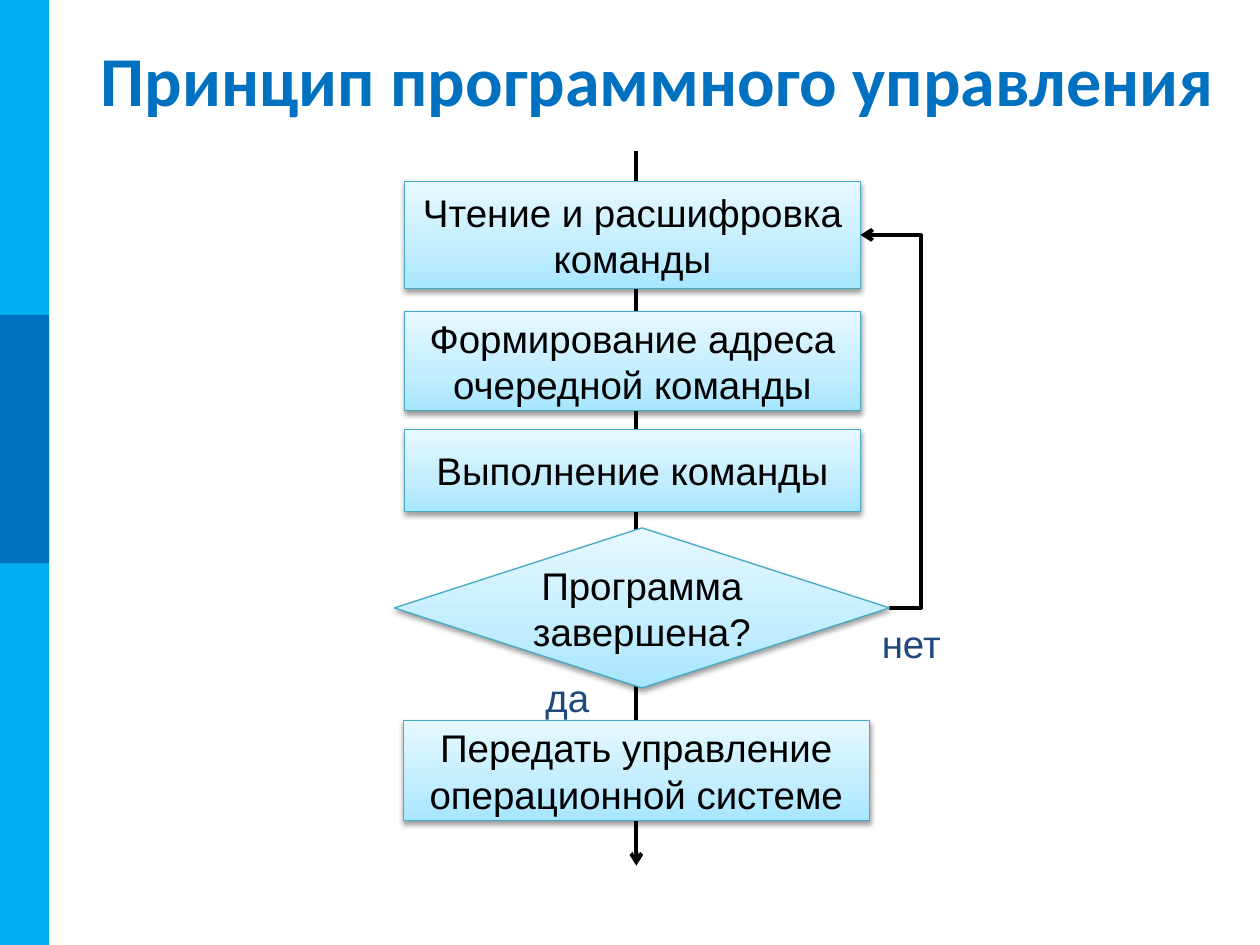
from lxml import etree
from pptx import Presentation
from pptx.dml.color import RGBColor
from pptx.enum.shapes import MSO_CONNECTOR, MSO_SHAPE
from pptx.enum.text import MSO_ANCHOR, PP_ALIGN
from pptx.oxml.ns import qn
from pptx.util import Inches, Pt

RECTANGLE = MSO_SHAPE.RECTANGLE
PROCESS = MSO_SHAPE.FLOWCHART_PROCESS
DECISION = MSO_SHAPE.FLOWCHART_DECISION
STRAIGHT, ELBOW = MSO_CONNECTOR.STRAIGHT, MSO_CONNECTOR.ELBOW
MIDDLE, TOP = MSO_ANCHOR.MIDDLE, MSO_ANCHOR.TOP
LEFT, CENTER = PP_ALIGN.LEFT, PP_ALIGN.CENTER

WIDTH, HEIGHT = 10, 7.5
GRADIENT = [(0, "A7E6FF"), (35, "C1EDFF"), (100, "E7F8FF")]

# Flowchart steps: kind, box (left, top, width, height), wording
STEPS = [
    (PROCESS, (3.21, 1.44, 3.62, 0.85), "Чтение и расшифровка команды"),
    (PROCESS, (3.21, 2.47, 3.62, 0.79), "Формирование адреса очередной команды"),
    (PROCESS, (3.21, 3.41, 3.62, 0.65), "Выполнение команды"),
    (DECISION, (3.13, 4.19, 3.93, 1.27), "Программа завершена?"),
    (PROCESS, (3.2, 5.72, 3.7, 0.79), "Передать управление операционной системе"),
]
BRANCHES = [((4.23, 5.3, 0.55, 0.47), "да"), ((6.9, 4.87, 0.68, 0.47), "нет")]


def color(value):
    return RGBColor.from_string(value)


def inches(values):
    return [Inches(value) for value in values]


def add_xml(parent, tag, **attributes):
    return etree.SubElement(parent, qn(tag), attributes)


def write(shape, text, size, font, ink, align=LEFT, anchor=TOP, bold=False, wrap=True):
    frame = shape.text_frame
    frame.word_wrap = wrap
    frame.vertical_anchor = anchor
    para = frame.paragraphs[0]
    para.text = text
    para.alignment = align
    para.font.size = Pt(size)
    para.font.name = font
    para.font.bold = bold
    para.font.color.rgb = color(ink)


def add_band(page, box, fill):
    band = page.shapes.add_shape(RECTANGLE, *inches(box))
    band.shadow.inherit = False
    band.fill.solid()
    band.fill.fore_color.rgb = color(fill)
    band.line.fill.background()


def add_sidebar(page, box):
    left, top, width, height = box
    add_band(page, box, "00B0F0")
    add_band(page, (left, top + height / 3, width, 1.97), "0070C0")


def add_title(page, box):
    title = page.shapes.add_textbox(*inches(box))
    write(title, "Принцип программного управления", 40, "Calibri", "0070C0",
          anchor=MIDDLE, bold=True)


def add_arrow(page, kind, start, end, bend=None):
    arrow = page.shapes.add_connector(kind, *inches(start + end))
    arrow.line.color.rgb = color("000000")
    arrow.line.width = Pt(2.25)
    properties = arrow._element.spPr
    add_xml(properties.find(qn("a:ln")), "a:tailEnd", type="arrow")
    add_xml(properties, "a:effectLst")
    if bend is not None:
        guides = properties.find(qn("a:prstGeom")).find(qn("a:avLst"))
        add_xml(guides, "a:gd", name="adj1", fmla=f"val {round(bend * 100000)}")


def add_step(page, kind, box, text):
    step = page.shapes.add_shape(kind, *inches(box))
    step.line.color.rgb = color("46AAC5")
    step.line.width = Pt(0.75)
    # Three-stop gradient, rising from the bottom edge
    step.fill.gradient()
    step.fill.gradient_angle = 90
    properties = step._element.spPr
    stops = properties.find(qn("a:gradFill")).find(qn("a:gsLst"))
    for stop in list(stops):
        stops.remove(stop)
    for position, value in GRADIENT:
        stop = add_xml(stops, "a:gs", pos=str(position * 1000))
        add_xml(stop, "a:srgbClr", val=value)
    # Soft shadow straight below
    step.shadow.inherit = False
    shadow = add_xml(properties.find(qn("a:effectLst")), "a:outerShdw",
                     blurRad=str(Pt(3.1)), dist=str(Pt(1.6)), dir="5400000", rotWithShape="0")
    add_xml(add_xml(shadow, "a:srgbClr", val="000000"), "a:alpha", val="38000")
    write(step, text, 22, "Arial", "000000", align=CENTER, anchor=MIDDLE)


def add_flowchart(page, axis, top, bottom):
    # Main flow runs behind the steps
    add_arrow(page, STRAIGHT, (axis, top), (axis, bottom))

    # Loop from the decision back to the first step
    first, decision = STEPS[0][1], STEPS[3][1]
    start = (decision[0] + decision[2], decision[1] + decision[3] / 2)
    end = (first[0] + first[2], first[1] + first[3] / 2)
    reach = 0.25
    add_arrow(page, ELBOW, start, end, bend=-reach / (start[0] - end[0]))

    for box, text in BRANCHES:
        label = page.shapes.add_textbox(*inches(box))
        write(label, text, 22, "Arial", "1F497D", wrap=False)
    for kind, box, text in STEPS:
        add_step(page, kind, box, text)


def main():
    deck = Presentation()
    deck.slide_width, deck.slide_height = inches((WIDTH, HEIGHT))
    page = deck.slides.add_slide(deck.slide_layouts[6])
    add_sidebar(page, (0, 0, 0.39, HEIGHT))
    add_title(page, (0.7, 0.3, 9.3, 0.64))
    add_flowchart(page, axis=5.05, top=1.2, bottom=6.87)
    deck.save("out.pptx")


if __name__ == "__main__":
    main()
